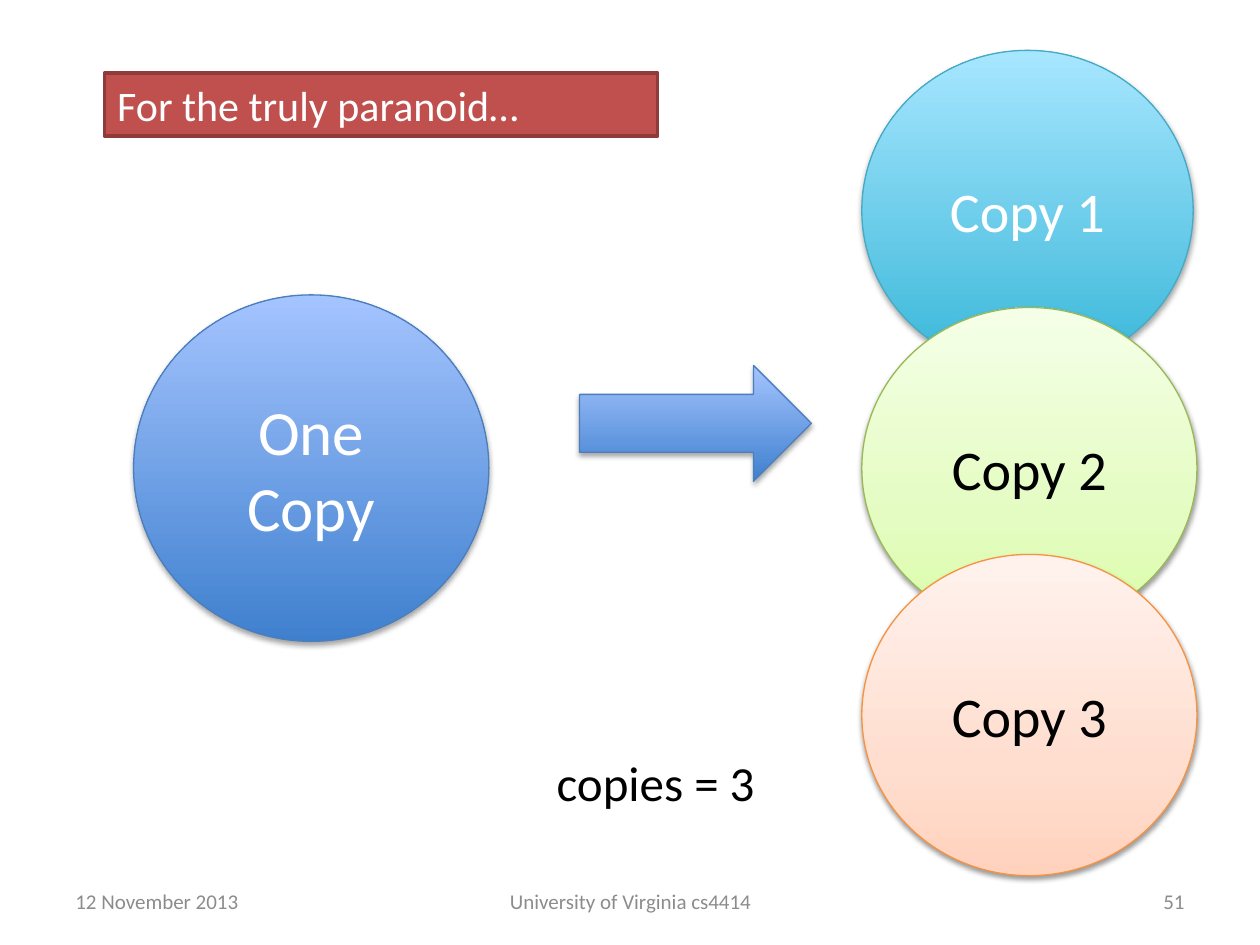
from lxml import etree
from pptx import Presentation
from pptx.dml.color import RGBColor
from pptx.enum.shapes import MSO_SHAPE
from pptx.enum.text import MSO_ANCHOR, MSO_AUTO_SIZE, PP_ALIGN
from pptx.oxml.ns import qn
from pptx.util import Inches, Pt

OVAL, ARROW = MSO_SHAPE.OVAL, MSO_SHAPE.RIGHT_ARROW
LEFT, CENTER, RIGHT = PP_ALIGN.LEFT, PP_ALIGN.CENTER, PP_ALIGN.RIGHT
TOP, MIDDLE = MSO_ANCHOR.TOP, MSO_ANCHOR.MIDDLE
NO_FIT = MSO_AUTO_SIZE.NONE
FONT = "Calibri"
COLORS = {
    "black": "000000",
    "white": "FFFFFF",
    "footer": "8C8C8C",
    "banner": "C0504D",
    "banner_line": "8E3B39",
    "blue_line": "4B7EBC",
    "aqua_line": "46AAC5",
    "green_line": "98B955",
    "orange_line": "F69240",
}
GRADIENTS = {
    "blue": [(0, "3F80CE"), (100, "A4C4FF")],
    "aqua": [(0, "39B7D8"), (100, "A7E6FF")],
    "green": [(0, "DAFDA7"), (35, "E4FCC2"), (100, "F5FFE7")],
    "orange": [(0, "FFD2BD"), (35, "FFDED0"), (100, "FFF2ED")],
}


def rgb(name):
    return RGBColor.from_string(COLORS[name])


def write(box, text, size, color, align=LEFT, anchor=TOP, wrap=True):
    frame = box.text_frame
    frame.auto_size = NO_FIT
    frame.word_wrap = wrap
    frame.vertical_anchor = anchor
    frame.text = text
    para = frame.paragraphs[0]
    para.alignment = align
    para.font.name = FONT
    para.font.size = Pt(size)
    para.font.color.rgb = rgb(color)


def add_color(parent, value):
    return etree.SubElement(parent, qn("a:srgbClr"), val=value)


def set_gradient(shape, stops):
    shape.fill.gradient()
    shape.fill.gradient_angle = 90
    stop_list = shape._element.spPr.find(qn("a:gradFill")).find(qn("a:gsLst"))
    for stop in list(stop_list):
        stop_list.remove(stop)
    for position, value in stops:
        stop = etree.SubElement(stop_list, qn("a:gs"), pos=str(position * 1000))
        add_color(stop, value)


def set_shadow(shape, opacity, distance):
    shape.shadow.inherit = False
    effects = shape._element.spPr.find(qn("a:effectLst"))
    shadow = etree.SubElement(
        effects, qn("a:outerShdw"), blurRad=str(Pt(3.1)), dist=str(Pt(distance)),
        dir="5400000", rotWithShape="0")
    color = add_color(shadow, COLORS["black"])
    etree.SubElement(color, qn("a:alpha"), val=str(opacity * 1000))


def add_glossy_shape(page, kind, place, hue):
    shape = page.shapes.add_shape(kind, *map(Inches, place))
    stops = GRADIENTS[hue]
    set_gradient(shape, stops)
    shape.line.color.rgb = rgb(hue + "_line")
    shape.line.width = Pt(0.75)
    if len(stops) == 2:
        set_shadow(shape, 35, 1.8)
    else:
        set_shadow(shape, 38, 1.6)
    return shape


def add_disc(page, place, hue, text, size, color):
    disc = add_glossy_shape(page, OVAL, place, hue)
    write(disc, text, size, color, CENTER, MIDDLE)


def add_label(page, place, text, size, color, **layout):
    box = page.shapes.add_textbox(*map(Inches, place))
    write(box, text, size, color, **layout)


def format_title(page):
    title = page.shapes.title
    title.left, title.top = Inches(0.83), Inches(0.58)
    title.width, title.height = Inches(4.39), Inches(0.5)
    title.fill.solid()
    title.fill.fore_color.rgb = rgb("banner")
    title.line.color.rgb = rgb("banner_line")
    title.line.width = Pt(2)
    write(title, "For the truly paranoid…", 24, "white")


def main():
    deck = Presentation()
    deck.slide_width, deck.slide_height = Inches(10), Inches(7.5)
    page = deck.slides.add_slide(deck.slide_layouts[5])
    format_title(page)

    for left, width, text, align in [
        (0.5, 2.33, "12 November 2013", LEFT),
        (3.42, 3.17, "University of Virginia cs4414", CENTER),
        (7.17, 2.33, "51", RIGHT),
    ]:
        add_label(page, (left, 6.95, width, 0.4), text, 12, "footer",
                  align=align, anchor=MIDDLE)

    add_label(page, (4.32, 5.92, 1.79, 0.57), "copies = 3", 28, "black", wrap=False)
    add_disc(page, (1.06, 2.34, 2.82, 2.75), "blue", "One Copy", 36, "white")
    add_glossy_shape(page, ARROW, (4.6, 2.9, 1.84, 0.92), "blue")
    for number, (top, width, height, hue, color) in enumerate([
        (0.4, 2.63, 2.54, "aqua", "white"),
        (2.44, 2.66, 2.55, "green", "black"),
        (4.4, 2.66, 2.55, "orange", "black"),
    ], start=1):
        add_disc(page, (6.84, top, width, height), hue, f"Copy {number}", 32, color)

    deck.save("out.pptx")


if __name__ == "__main__":
    main()
